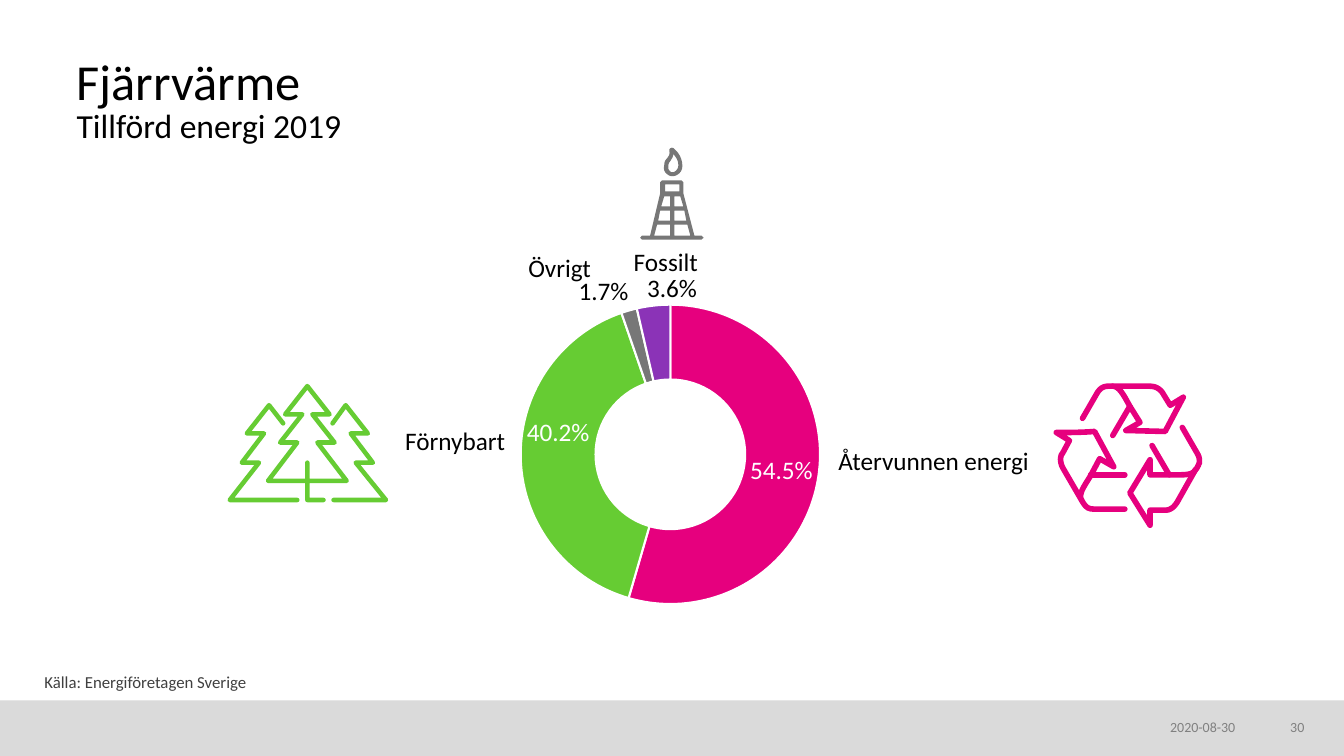
from lxml import etree
from pptx import Presentation
from pptx.chart.data import CategoryChartData
from pptx.dml.color import RGBColor
from pptx.enum.chart import XL_CHART_TYPE
from pptx.enum.shapes import MSO_SHAPE
from pptx.enum.text import MSO_ANCHOR, MSO_AUTO_SIZE, PP_ALIGN
from pptx.oxml import parse_xml
from pptx.oxml.ns import nsdecls, qn
from pptx.util import Cm, Pt

DONUT = XL_CHART_TYPE.DOUGHNUT
RECT = MSO_SHAPE.RECTANGLE
TOP, MIDDLE, BOTTOM = MSO_ANCHOR.TOP, MSO_ANCHOR.MIDDLE, MSO_ANCHOR.BOTTOM
LEFT, RIGHT = PP_ALIGN.LEFT, PP_ALIGN.RIGHT
FIT = MSO_AUTO_SIZE.SHAPE_TO_FIT_TEXT

BLACK = RGBColor(0x00, 0x00, 0x00)
WHITE = RGBColor(0xFF, 0xFF, 0xFF)
BAND = RGBColor(0xDA, 0xDA, 0xDA)
DARK = RGBColor(0x40, 0x40, 0x40)
MUTED = RGBColor(0x80, 0x80, 0x80)
PINK = RGBColor(0xE6, 0x00, 0x7E)
GREEN = RGBColor(0x66, 0xCC, 0x33)
GRAY = RGBColor(0x77, 0x77, 0x77)
PURPLE = RGBColor(0x8B, 0x33, 0xB7)
FONT = "Calibri"
UNIT = Cm(0.0254)
FINE = 10

TREES = [
    [(53, 37), (39, 19), (17, 47), (34, 47), (12, 76), (29, 76), (0, 113), (67, 113)],
    [(77, 76), (77, 94), (116, 94), (87, 56), (104, 56), (82, 28), (99, 28), (77, 0),
     (55, 28), (72, 28), (50, 56), (67, 56), (38, 94), (77, 94), (77, 113), (93, 113)],
    [(102, 37), (115, 19), (137, 47), (120, 47), (142, 76), (125, 76), (155, 113), (103, 113)],
]
CYCLE = [
    [(13, 54), (6, 67), (4, 68, 3, 76, 7, 82), (25, 113), (23, 110, 24, 105, 29, 97),
     (34, 89), (43, 72), (57, 80), (38, 45), (26, 46, 13, 46, 0, 46), (13, 54)],
    [(105, 6), (102, 2, 98, 0, 92, 0), (56, 0), (60, 0, 64, 4, 68, 11), (73, 20),
     (83, 36), (69, 44), (108, 45), (126, 11), (113, 19), (105, 6)],
    [(56, 0), (54, 0), (49, 0, 45, 0, 41, 6), (26, 32)],
    [(56, 49), (73, 20)],
    [(95, 59), (112, 88), (123, 88), (131, 88, 136, 87, 138, 83), (139, 82),
     (141, 79, 141, 78, 142, 76), (142, 73, 142, 70, 140, 67), (125, 41)],
    [(112, 88), (93, 88), (93, 73), (73, 106), (93, 138), (93, 123), (109, 123),
     (113, 123, 117, 120, 120, 115), (138, 83)],
    [(25, 113), (28, 118, 30, 122, 37, 122), (68, 122)],
    [(68, 88), (34, 88)],
]
FLAME = [
    [(32, 28), (37, 28, 42, 24, 42, 18), (42, 10, 38, 4, 33, 0), (32, 0, 31, -1, 31, 0),
     (30, 0, 29, 1, 29, 2), (29, 3), (30, 7, 28, 8, 27, 10), (25, 12, 24, 14, 24, 17),
     (23, 21, 24, 24, 27, 26), (28, 27, 30, 28, 32, 28)],
    [(28, 18), (28, 16, 29, 14, 30, 13), (31, 11, 33, 9, 33, 6), (36, 9, 38, 13, 38, 17),
     (38, 21, 35, 24, 32, 24), (31, 24, 30, 24, 30, 23), (28, 22, 28, 20, 28, 18)],
]
FRAME = [
    [(61, 87), (54, 87), (43, 45), (43, 34), (41, 32), (22, 32), (20, 34), (20, 45),
     (10, 87), (2, 87), (0, 89), (2, 91), (61, 91), (63, 89), (61, 87)],
    [(39, 36), (39, 43), (25, 43), (25, 36), (39, 36)],
]
PANES = [
    [(24, 48), (30, 48), (30, 58), (21, 58), (24, 48)],
    [(20, 62), (30, 62), (30, 72), (18, 72), (20, 62)],
    [(17, 76), (30, 76), (30, 87), (14, 87), (17, 76)],
]
TOWER = FRAME + PANES + [[(64 - x, y) for x, y in pane] for pane in PANES]

LABELS = [
    ("Återvunnen energi", (20.88, 11.18, 5.38, 0.94), LEFT),
    ("Förnybart", (9.93, 10.69, 3.05, 0.94), RIGHT),
    ("Övrigt", (13.03, 6.32, 2.11, 0.94), RIGHT),
    ("Fossilt", (15.72, 6.17, 2.13, 0.94), LEFT),
]
SLICES = [
    (0.545, PINK, WHITE, None),
    (0.402, GREEN, WHITE, (0, -0.05)),
    (0.017, GRAY, BLACK, (-0.05, -0.11)),
    (0.036, PURPLE, BLACK, (0.02, -0.11)),
]


def add_text(slide, box, text, sizes, color, align=LEFT, anchor=TOP, space=1.0, tight=True):
    """Place one paragraph in a box, with one size for each run."""
    shape = slide.shapes.add_textbox(*map(Cm, box))
    frame = shape.text_frame
    frame.text = text
    frame.word_wrap = tight
    frame.vertical_anchor = anchor
    if tight:
        frame.margin_left = frame.margin_right = frame.margin_top = frame.margin_bottom = 0
    else:
        frame.auto_size = FIT
    para = frame.paragraphs[0]
    para.alignment = align
    para.line_spacing = space
    for run, size in zip(para.runs, sizes):
        run.font.name = FONT
        run.font.size = Pt(size)
        run.font.color.rgb = color


def flatten(steps):
    """Turn points and cubic curves into a list of fine points."""
    points = []
    for step in steps:
        if len(step) == 2:
            points.append(step)
            continue
        ends = [points[-1], step[:2], step[2:4], step[4:]]
        for part in range(1, 7):
            t = part / 6
            parts = ((1 - t) ** 3, 3 * t * (1 - t) ** 2, 3 * t * t * (1 - t), t ** 3)
            points.append(tuple(sum(w * p[i] for w, p in zip(parts, ends)) for i in (0, 1)))
    return [(x * FINE, y * FINE) for x, y in points]


def add_icon(shapes, spot, strokes, color, width=None):
    """Draw an icon at a spot, as rounded lines or as a filled outline."""
    paths = [flatten(steps) for steps in strokes]
    pen = shapes.build_freeform(*paths[0][0], scale=UNIT / FINE)
    for path in paths:
        if path is not paths[0]:
            pen.move_to(*path[0])
        pen.add_line_segments(path[1:], close=path[0] == path[-1])
    shape = pen.convert_to_shape(*map(Cm, spot))
    shape.shadow.inherit = False
    if width is None:
        shape.fill.solid()
        shape.fill.fore_color.rgb = color
        shape.line.fill.background()
        return
    shape.fill.background()
    shape.line.color.rgb = color
    shape.line.width = Pt(width)
    line = shape.line.fill and shape.element.spPr.find(qn("a:ln"))
    line.set("cap", "rnd")
    etree.SubElement(line, qn("a:round"))


def layout(tags):
    """Make a manual chart layout from tag and value pairs."""
    inner = "".join(f'<c:{tag} val="{val}"/>' for tag, val in tags)
    return parse_xml(f'<c:layout {nsdecls("c")}><c:manualLayout>{inner}</c:manualLayout></c:layout>')


def add_donut(slide, box):
    """Place the energy doughnut in a box."""
    data = CategoryChartData(number_format="0.0%")
    data.categories = ["1", "2", "3", "4"]
    data.add_series("Series 1", [part[0] for part in SLICES])
    chart = slide.shapes.add_chart(DONUT, *map(Cm, box), data).chart
    chart.has_legend = chart.has_title = False
    chart.font.name, chart.font.size = FONT, Pt(10)
    chart.font.color.rgb = BLACK
    plot = chart.plots[0]
    plot.vary_by_categories = False
    series = plot.series[0]
    tags = series.data_labels
    tags.show_value = True
    tags.number_format, tags.number_format_is_linked = "0.0%", False
    tags.font.size = Pt(18)
    tags.font.color.rgb = WHITE
    for index, (_, color, ink, shift) in enumerate(SLICES):
        point = series.points[index]
        point.format.fill.solid()
        point.format.fill.fore_color.rgb = color
        point.format.line.color.rgb = WHITE
        point.format.line.width = Pt(1.5)
        if shift:
            font = point.data_label.font
            font.size = Pt(18)
            font.color.rgb = ink
            mark = chart.element.xpath(f".//c:dLbl/c:idx[@val='{index}']")[0]
            mark.addnext(parse_xml(f'<c:numFmt {nsdecls("c")} formatCode="0.0%" sourceLinked="0"/>'))
            mark.addnext(layout(zip("xy", shift)))
    area = chart.element.xpath(".//c:plotArea")[0]
    for old in area.findall(qn("c:layout")):
        area.remove(old)
    area.insert(0, layout([("layoutTarget", "inner"), ("xMode", "edge"), ("yMode", "edge"),
                           ("x", 0.306), ("y", 0.133), ("w", 0.424), ("h", 0.605)]))


def add_footer(slide, box):
    """Place the footer band with the date and slide number."""
    left, top, width, _ = box
    band = slide.shapes.add_shape(RECT, *map(Cm, box))
    band.shadow.inherit = False
    band.fill.solid()
    band.fill.fore_color.rgb = BAND
    band.line.fill.background()
    right = left + width
    add_text(slide, (right - 4.38, top + 0.46, 1.88, 0.5), "2020-08-30", [10], MUTED)
    add_text(slide, (right - 1.99, top + 0.46, 0.99, 0.5), "30", [10], MUTED, RIGHT)


def main():
    """Build and save the slide."""
    deck = Presentation()
    deck.slide_width, deck.slide_height = Cm(33.87), Cm(19.05)
    slide = deck.slides.add_slide(deck.slide_layouts[6])
    add_footer(slide, (0, 17.65, 33.87, 1.4))
    add_text(slide, (1.93, 0.94, 30.15, 2.72), "Fjärrvärme \vTillförd energi 2019",
             [36, 24], BLACK, anchor=BOTTOM, space=0.85)
    add_text(slide, (1.12, 16.92, 12.34, 0.58), "Källa: Energiföretagen Sverige",
             [12], DARK, anchor=MIDDLE, space=0.9)
    for text, box, align in LABELS:
        add_text(slide, box, text, [18], BLACK, align, space=0.9, tight=False)
    add_icon(slide.shapes, (5.79, 9.73), TREES, GREEN, 3.25)
    add_icon(slide.shapes, (26.62, 9.73), CYCLE, PINK, 4)
    group = slide.shapes.add_group_shape()
    for part in (FLAME, TOWER):
        add_icon(group.shapes, (16.13, 3.73), part, GRAY)
    add_donut(slide, (7.54, 6.02, 18.06, 12.47))
    deck.save("out.pptx")


if __name__ == "__main__":
    main()
